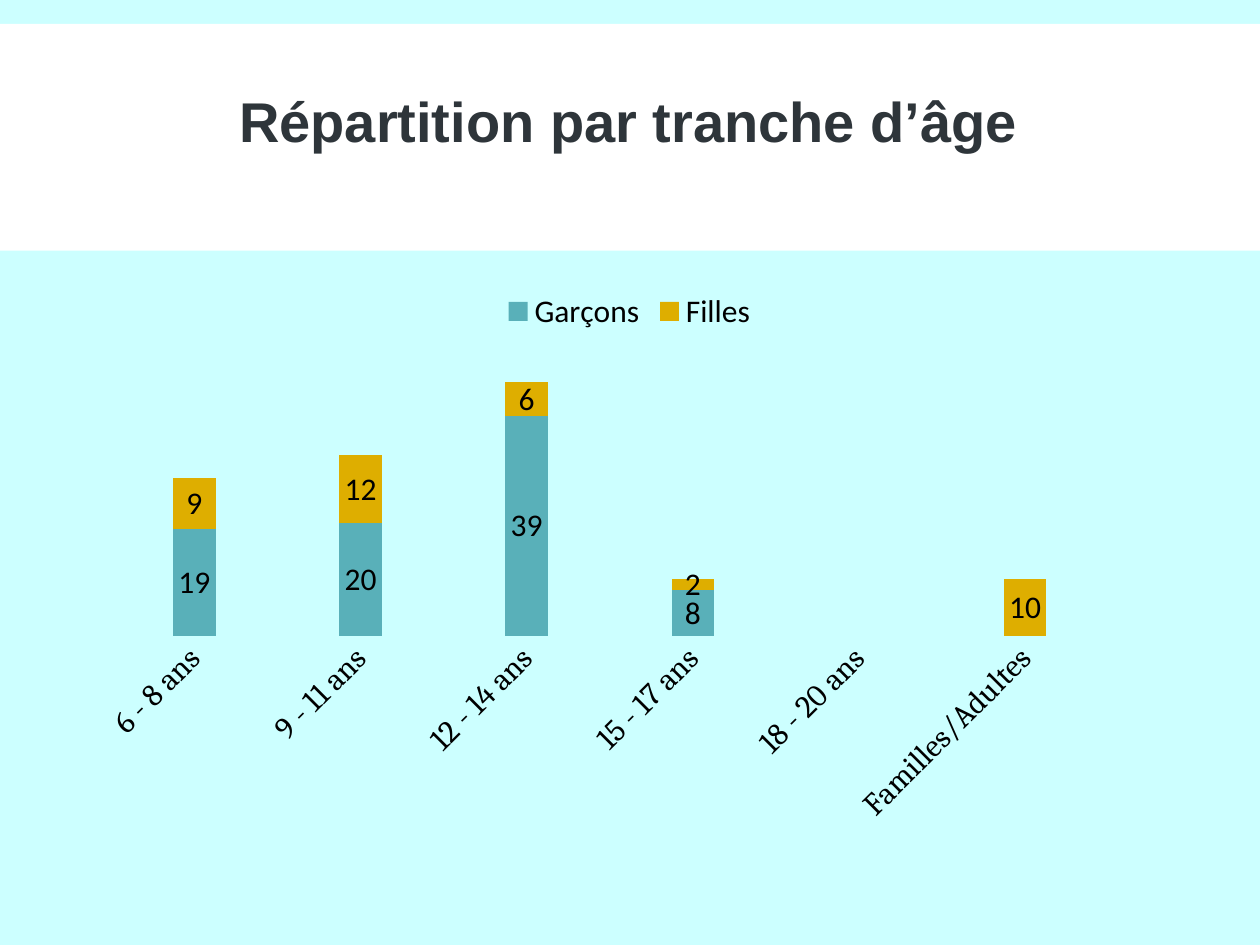
from dataclasses import dataclass

import lxml.etree
import pptx
import pptx.chart.data
import pptx.dml.color
import pptx.enum.chart
import pptx.enum.shapes
import pptx.enum.text
import pptx.oxml
import pptx.oxml.ns
import pptx.util

Pt = pptx.util.Pt


@dataclass(frozen=True)
class Theme:
    background: str = "CCFFFF"
    band: str = "FFFFFF"
    title: str = "2E353A"
    text: str = "000000"
    boys: str = "59B0B9"
    girls: str = "DEAE00"
    title_font: str = "Arial"
    chart_font: str = "Calibri"
    axis_font: str = "Cambria"
    title_size: float = 32
    chart_size: float = 18


@dataclass(frozen=True)
class Box:
    left: float
    top: float
    width: float
    height: float

    def lengths(self) -> tuple:
        return Pt(self.left), Pt(self.top), Pt(self.width), Pt(self.height)


@dataclass(frozen=True)
class Group:
    name: str
    color: str
    values: tuple
    in_legend: bool


THEME = Theme()
BAND = Box(0, 13.7, 720, 129.6)
TITLE = Box(37, 37.4, 644.4, 68.4)
CHART = Box(53.7, 158.2, 612, 331.2)
PLOT_LAYOUT = {"x": 0.055, "y": 0.133, "w": 0.931, "h": 0.486}
AGES = ("6 - 8 ans", "9 - 11 ans", "12 - 14 ans", "15 - 17 ans", "18 - 20 ans", "Familles/Adultes")
NO_VALUES = (None,) * len(AGES)
# The first two series feed the legend, the last two hold the counts
GROUPS = (
    Group("Garçons", THEME.boys, NO_VALUES, True),
    Group("Filles", THEME.girls, NO_VALUES, True),
    Group("Series 3", THEME.boys, (19, 20, 39, 8, None, None), False),
    Group("Series 4", THEME.girls, (9, 12, 6, 2, None, 10), False),
)


def rgb(color: str) -> pptx.dml.color.RGBColor:
    return pptx.dml.color.RGBColor.from_string(color)


def format_font(font, *, name: str, size: float, color: str, bold: bool = False) -> None:
    font.name = name
    font.size = Pt(size)
    font.bold = bold
    font.color.rgb = rgb(color)


def write_text(shape, text: str, *, line_spacing: float, **font_format) -> None:
    frame = shape.text_frame
    frame.word_wrap = True
    frame.vertical_anchor = pptx.enum.text.MSO_ANCHOR.MIDDLE
    paragraph = frame.paragraphs[0]
    paragraph.alignment = pptx.enum.text.PP_ALIGN.CENTER
    paragraph.line_spacing = line_spacing
    run = paragraph.add_run()
    run.text = text
    format_font(run.font, **font_format)


def add_band(slide, box: Box) -> None:
    shape = slide.shapes.add_shape(pptx.enum.shapes.MSO_SHAPE.RECTANGLE, *box.lengths())
    shape.shadow.inherit = False
    shape.fill.solid()
    shape.fill.fore_color.rgb = rgb(THEME.band)
    shape.line.fill.background()
    # Send the band behind the title
    slide.shapes._spTree.insert(2, shape._element)


def add_chart_element(parent, tag: str, value=None):
    element = lxml.etree.SubElement(parent, pptx.oxml.ns.qn(f"c:{tag}"))
    if value is not None:
        element.set("val", str(value))
    return element


def fix_plot_area(chart) -> None:
    plot_area = chart._chartSpace.chart.plotArea
    for old_layout in plot_area.findall(pptx.oxml.ns.qn("c:layout")):
        plot_area.remove(old_layout)
    layout = lxml.etree.Element(pptx.oxml.ns.qn("c:layout"))
    manual = add_chart_element(layout, "manualLayout")
    settings = {"layoutTarget": "inner", "xMode": "edge", "yMode": "edge", **PLOT_LAYOUT}
    for tag, value in settings.items():
        add_chart_element(manual, tag, value)
    plot_area.insert(0, layout)


def hide_legend_entries(legend) -> None:
    position = legend._element.find(pptx.oxml.ns.qn("c:legendPos"))
    hidden = [index for index, group in enumerate(GROUPS) if not group.in_legend]
    for index in reversed(hidden):
        entry = lxml.etree.Element(pptx.oxml.ns.qn("c:legendEntry"))
        add_chart_element(entry, "idx", index)
        add_chart_element(entry, "delete", 1)
        position.addnext(entry)


def spread(items: tuple, gap) -> list:
    """Follow each item with an empty slot, which keeps the columns apart."""
    return [entry for item in items for entry in (item, gap)]


def add_age_chart(slide, box: Box) -> None:
    data = pptx.chart.data.CategoryChartData()
    data.categories = spread(AGES, "")[:-1]
    for group in GROUPS:
        data.add_series(group.name, spread(group.values, None))
    chart_type = pptx.enum.chart.XL_CHART_TYPE.COLUMN_STACKED
    chart = slide.shapes.add_chart(chart_type, *box.lengths(), data).chart
    chart.has_title = False
    chart_text = dict(name=THEME.chart_font, size=THEME.chart_size, color=THEME.text)
    format_font(chart.font, **chart_text)
    fix_plot_area(chart)

    # Legend
    chart.has_legend = True
    chart.legend.position = pptx.enum.chart.XL_LEGEND_POSITION.TOP
    chart.legend.include_in_layout = False
    format_font(chart.legend.font, **chart_text)
    hide_legend_entries(chart.legend)

    # Columns and value labels
    plot = chart.plots[0]
    plot.gap_width = 95
    plot.overlap = 100
    plot.vary_by_categories = False
    for series, group in zip(plot.series, GROUPS):
        series.format.fill.solid()
        series.format.fill.fore_color.rgb = rgb(group.color)
        series.data_labels.show_value = True
        series.data_labels.position = pptx.enum.chart.XL_LABEL_POSITION.CENTER
        format_font(series.data_labels.font, **chart_text)

    # Axes
    value_axis = chart.value_axis
    value_axis.visible = False
    value_axis.has_major_gridlines = False
    value_axis.minimum_scale = 0
    value_axis.maximum_scale = 50
    category_axis = chart.category_axis
    category_axis.major_tick_mark = pptx.enum.chart.XL_TICK_MARK.NONE
    category_axis.format.line.fill.background()
    format_font(category_axis.tick_labels.font, name=THEME.axis_font,
                size=THEME.chart_size, color=THEME.text)
    body = category_axis._element.find(".//" + pptx.oxml.ns.qn("a:bodyPr"))
    body.set("rot", str(-45 * 60000))


def main() -> None:
    presentation = pptx.Presentation()
    presentation.slide_width = Pt(720)
    presentation.slide_height = Pt(540)
    slide = presentation.slides.add_slide(presentation.slide_layouts[5])
    slide.background.fill.solid()
    slide.background.fill.fore_color.rgb = rgb(THEME.background)

    # Title on its band
    add_band(slide, BAND)
    title = slide.shapes.title
    title.left, title.top, title.width, title.height = TITLE.lengths()
    write_text(title, "Répartition par tranche d’âge", line_spacing=0.85,
               name=THEME.title_font, size=THEME.title_size, color=THEME.title, bold=True)

    # Age chart
    add_age_chart(slide, CHART)
    presentation.save("out.pptx")


if __name__ == "__main__":
    main()
